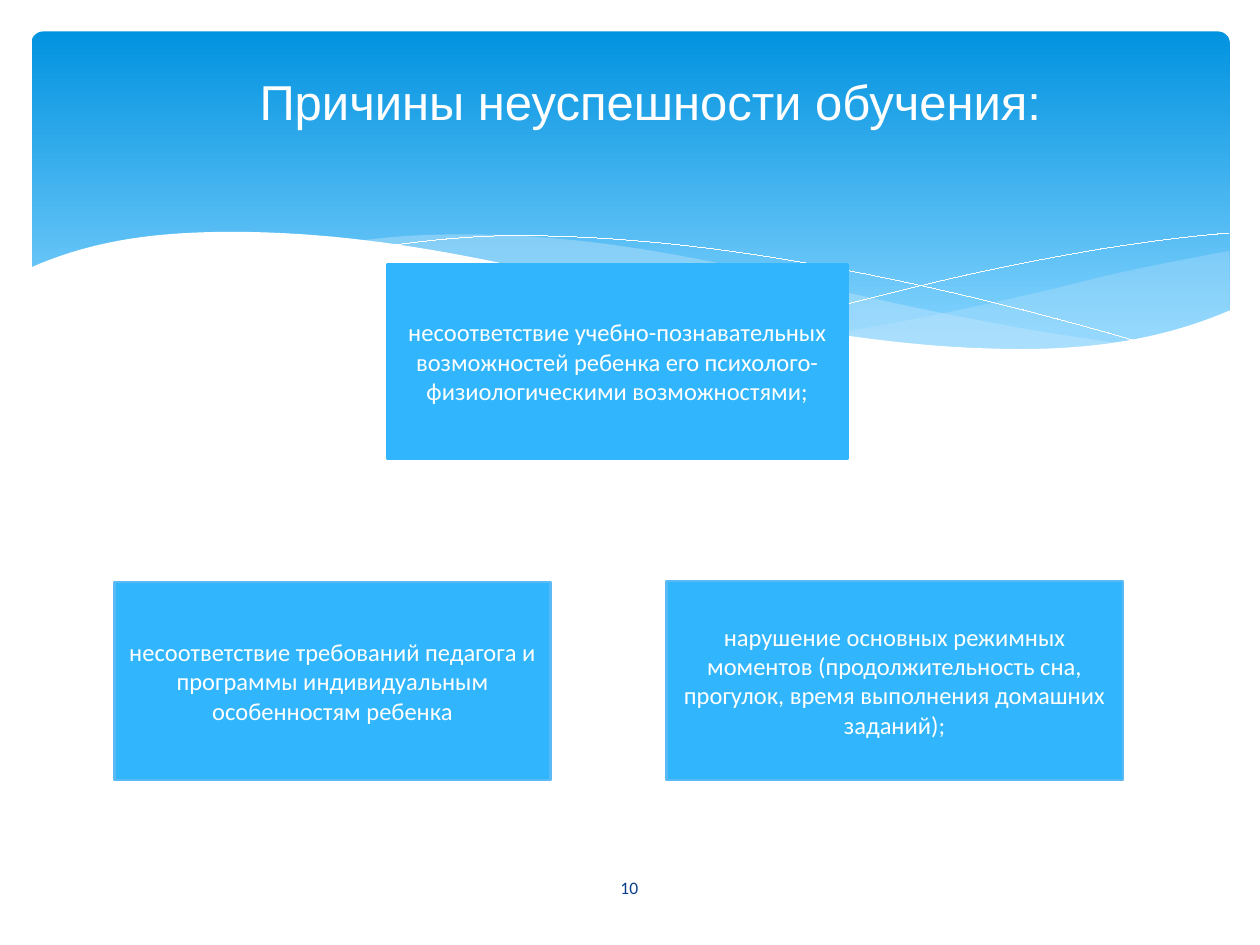
from dataclasses import dataclass
from itertools import pairwise

from lxml.etree import SubElement
from pptx import Presentation
from pptx.dml.color import RGBColor as RGB
from pptx.enum.shapes import MSO_SHAPE as Shape
from pptx.enum.text import MSO_ANCHOR as Anchor, PP_ALIGN as Align
from pptx.oxml.ns import qn
from pptx.util import Inches, Pt


@dataclass(frozen=True)
class Theme:
    white: RGB = RGB.from_string("FFFFFF")
    sky_top: RGB = RGB.from_string("0293E0")
    sky_bottom: RGB = RGB.from_string("83D3FE")
    wave: RGB = RGB.from_string("C6E7FC")
    card: RGB = RGB.from_string("31B6FD")
    card_edge: RGB = RGB.from_string("5BBAF6")
    number: RGB = RGB.from_string("073E87")
    title_font: str = "Arial"
    body_font: str = "Calibri"
    title_size: int = 28
    body_size: int = 14
    number_size: int = 10
    hairline: float = 0.01
    card_line: float = 1.25


theme = Theme()
deck = Presentation()
deck.slide_width, deck.slide_height = Inches(10), Inches(7.5)
slide = deck.slides.add_slide(deck.slide_layouts[6])
shapes = slide.shapes


def write(holder, text, *, size, color, font=theme.body_font, anchor=Anchor.MIDDLE):
    frame = holder.text_frame
    frame.word_wrap = True
    frame.vertical_anchor = anchor
    paragraph = frame.paragraphs[0]
    paragraph.alignment = Align.CENTER
    run = paragraph.add_run()
    run.text = text
    run.font.name, run.font.size, run.font.color.rgb = font, Pt(size), color


def draw_wave(*edges, fill=None, opacity=100, steps=20):
    """Draw smooth edges, each a list of knots (x, y, slope) joined by Hermite cubics."""
    points = []
    for knots in edges:
        points.append(knots[0][:2])
        for (x0, y0, slope0), (x1, y1, slope1) in pairwise(knots):
            span = x1 - x0
            for step in range(1, steps + 1):
                t = step / steps
                blend = t * t * (3 - 2 * t)
                bend = t * (1 - t) * (slope0 * (1 - t) - slope1 * t)
                points.append((x0 + span * t, y0 + (y1 - y0) * blend + span * bend))
    start, *rest = [(Inches(x), Inches(y)) for x, y in points]
    builder = shapes.build_freeform(*start)
    builder.add_line_segments(rest, close=fill is not None)
    wave = builder.convert_to_shape()
    wave.shadow.inherit = False
    if fill is None:
        wave.fill.background()
        wave.line.color.rgb = theme.white
        wave.line.width = Pt(theme.hairline)
        return
    wave.fill.solid()
    wave.fill.fore_color.rgb = fill
    wave.line.fill.background()
    if opacity < 100:
        tint = wave._element.spPr.find(".//" + qn("a:srgbClr"))
        SubElement(tint, qn("a:alpha")).set("val", str(opacity * 1000))


sky = shapes.add_shape(Shape.ROUNDED_RECTANGLE, Inches(0.25), Inches(0.25), Inches(9.51), Inches(2.7))
sky.adjustments[0] = 0.034
sky.shadow.inherit = False
sky.line.fill.background()
sky.fill.gradient()
sky.fill.gradient_angle = 270
stops = zip(sky.fill.gradient_stops, (theme.sky_top, theme.sky_bottom), (0, 0.9))
for stop, color, position in stops:
    stop.color.rgb, stop.position = color, position

right_top = [(6.61, 2.65, -0.17), (8.61, 2.23, -0.25), (9.76, 1.99, -0.19)]
right_bottom = [(9.76, 2.47, -0.42), (8.1, 2.78, 0), (6.61, 2.65, 0.14)]
middle_top = [(2.86, 1.91, -0.14), (3.7, 1.86, 0), (6.29, 2.22, 0.24), (8.93, 2.73, 0.13)]
middle_bottom = [(8.93, 2.73, -0.1), (8.15, 2.78, 0), (4.49, 2.22, 0.25), (2.86, 1.91, 0.14)]
falling_crest = [(3.09, 1.95, -0.14), (4.1, 1.87, 0), (6.36, 2.08, 0.17), (9.07, 2.72, 0.29)]
rising_crest = [(6.13, 2.57, -0.27), (8.06, 2.1, -0.2), (9.75, 1.85, -0.08)]
shore_top = [(0.23, 2.13, -0.45), (1.85, 1.84, 0), (4.47, 2.2, 0.24), (8.1, 2.77, 0), (9.77, 2.46, -0.43)]
shore_bottom = [(9.77, 3.29, 0), (0.23, 3.29, 0)]

draw_wave(right_top, right_bottom, fill=theme.wave, opacity=29)
draw_wave(middle_top, middle_bottom, fill=theme.wave, opacity=40)
for crest in (falling_crest, rising_crest):
    draw_wave(crest)
draw_wave(shore_top, shore_bottom, fill=theme.white)

page_number = shapes.add_textbox(Inches(4.36), Inches(6.84), Inches(1.27), Inches(0.4))
write(page_number, "10", size=theme.number_size, color=theme.number)

title = shapes.add_textbox(Inches(1.38), Inches(0.52), Inches(7.56), Inches(0.57))
write(title, "Причины неуспешности обучения:", size=theme.title_size, color=theme.white,
      font=theme.title_font, anchor=Anchor.TOP)

reasons = [
    ("несоответствие учебно-познавательных возможностей ребенка его "
     "психолого-физиологическими возможностями;", (3.07, 2.1, 3.66, 1.54), theme.card),
    ("нарушение основных режимных моментов (продолжительность сна, прогулок, "
     "время выполнения домашних заданий);", (5.29, 4.61, 3.62, 1.58), theme.card_edge),
    ("несоответствие требований педагога и программы индивидуальным "
     "особенностям ребенка", (0.91, 4.62, 3.46, 1.57), theme.card_edge),
]
for reason, place, edge in reasons:
    card = shapes.add_shape(Shape.RECTANGLE, *map(Inches, place))
    card.shadow.inherit = False
    card.fill.solid()
    card.fill.fore_color.rgb = theme.card
    card.line.color.rgb = edge
    card.line.width = Pt(theme.card_line)
    write(card, reason, size=theme.body_size, color=theme.white)

deck.save("out.pptx")
